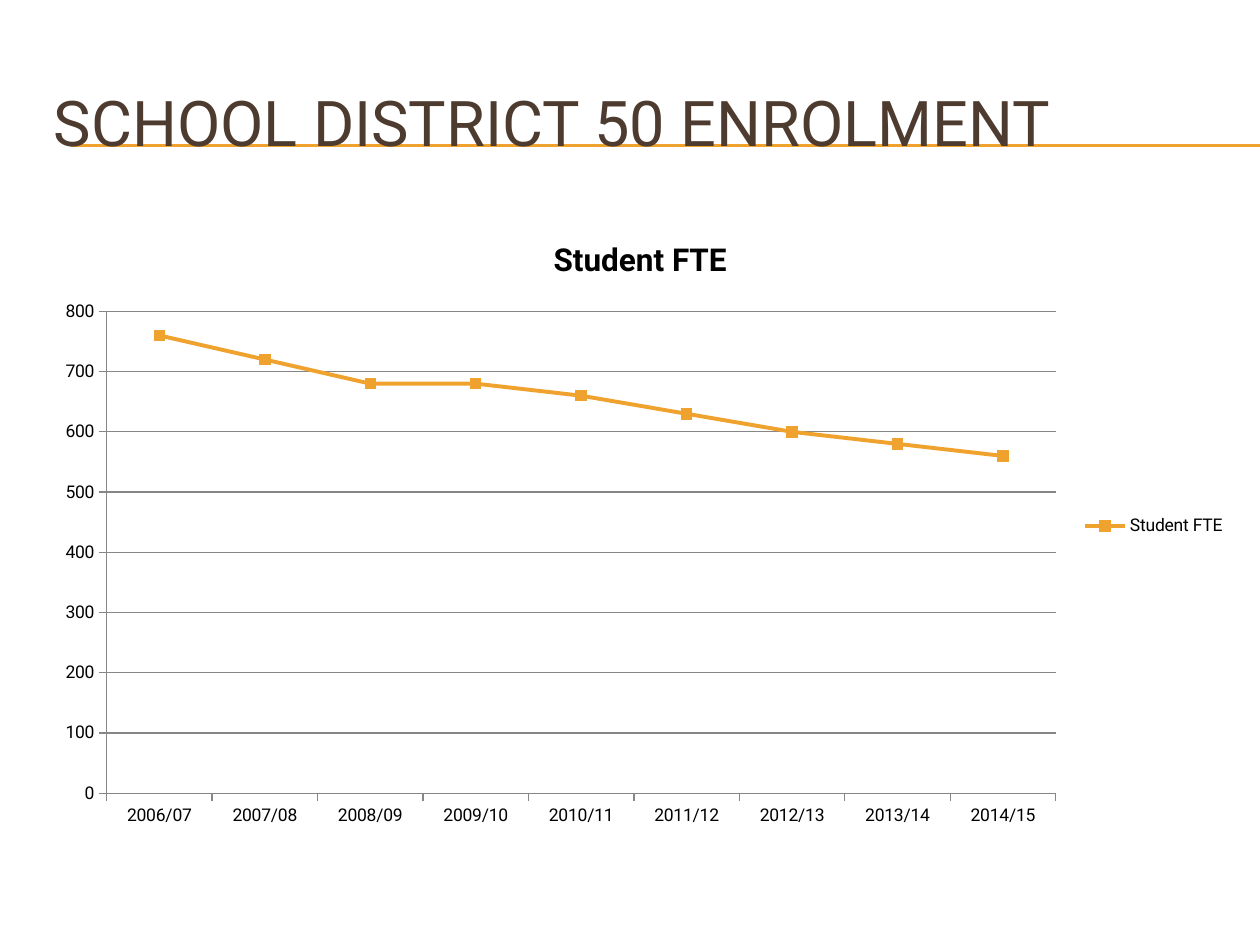
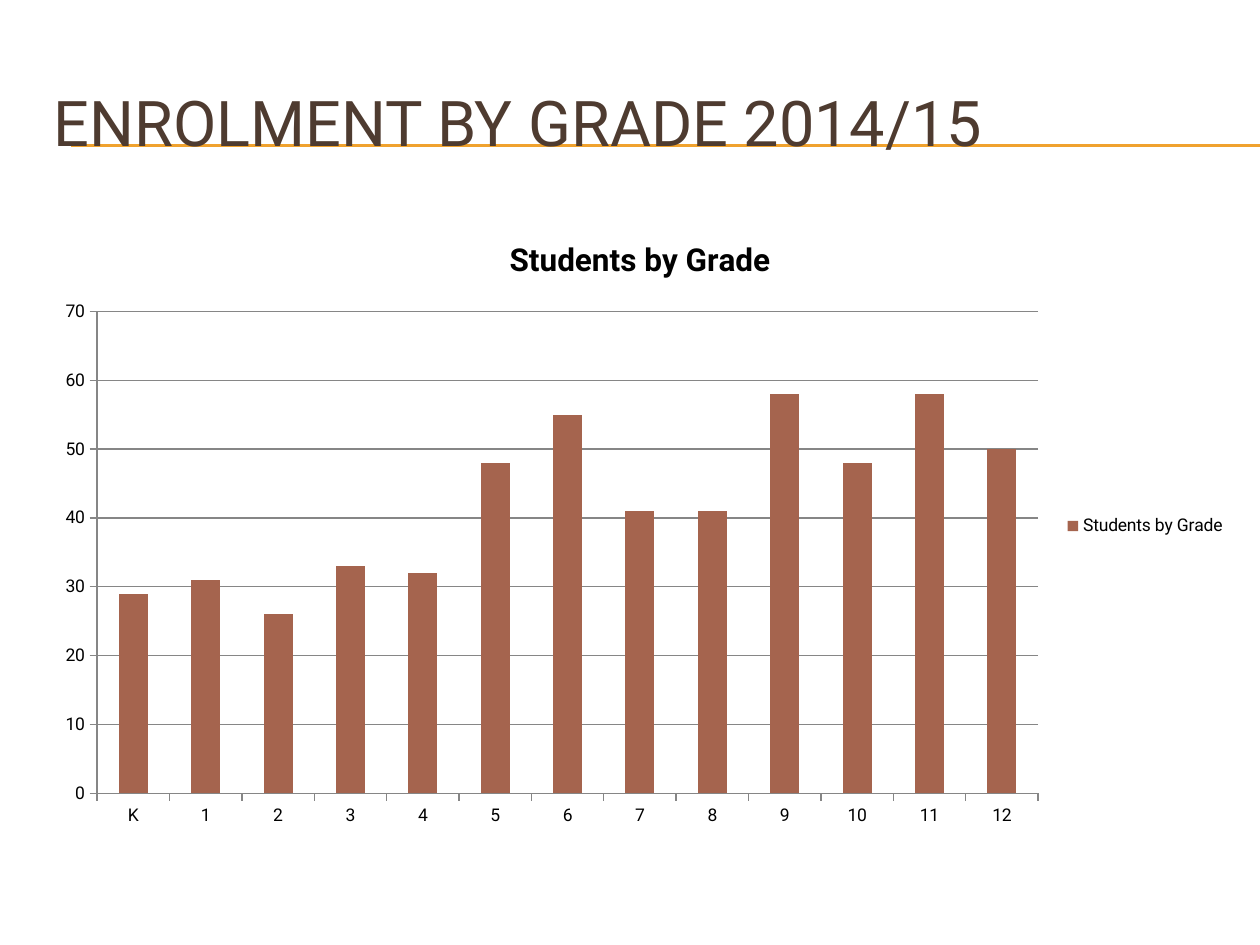
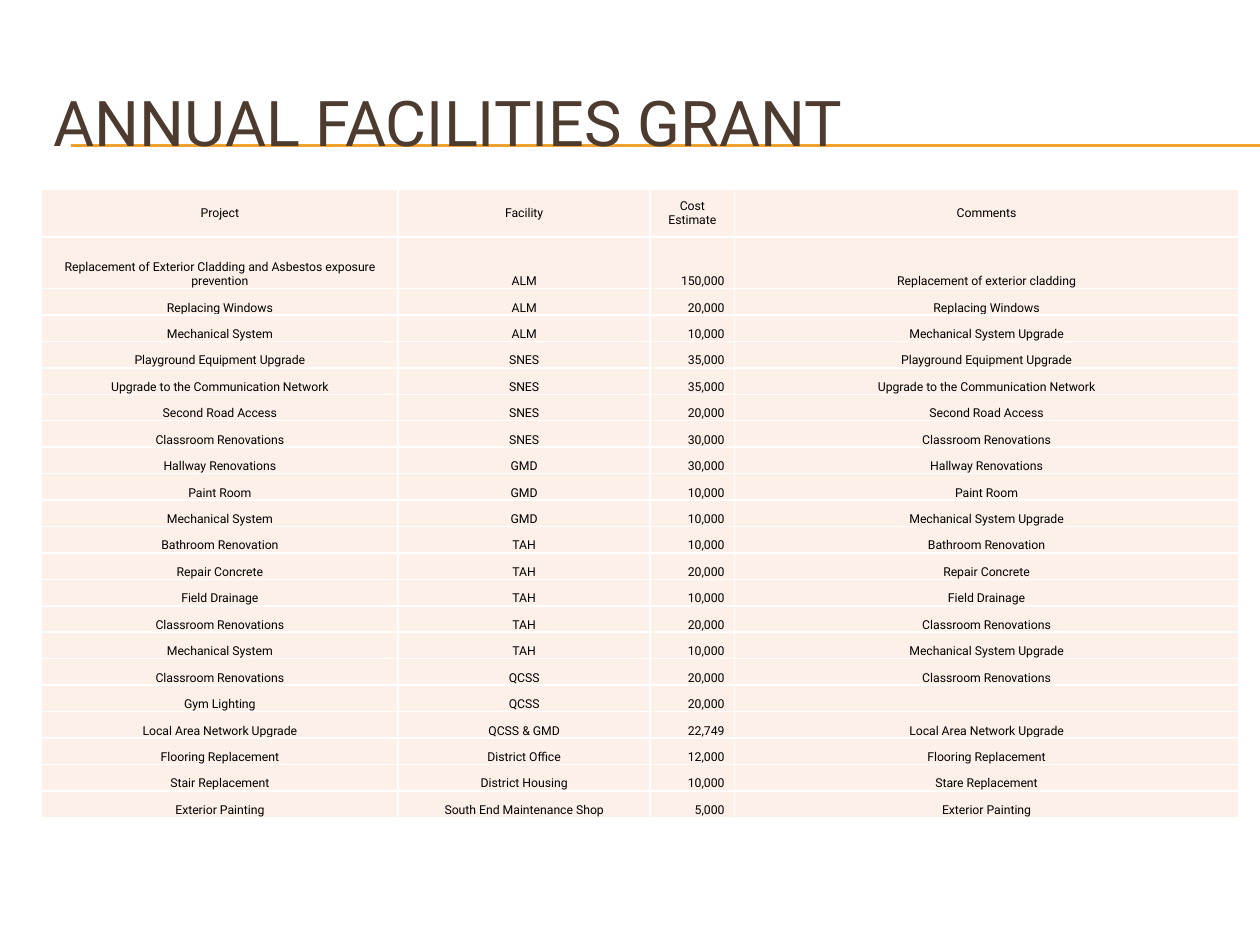
import dataclasses

import pptx
import pptx.chart.data
import pptx.dml.color
import pptx.enum.chart
import pptx.enum.shapes
import pptx.enum.text
import pptx.oxml
import pptx.oxml.ns
import pptx.util
from lxml import etree

Inches = pptx.util.Inches
Pt = pptx.util.Pt
ALIGN = pptx.enum.text.PP_ALIGN
ANCHOR = pptx.enum.text.MSO_ANCHOR
CHART = pptx.enum.chart.XL_CHART_TYPE


@dataclasses.dataclass(frozen=True)
class Theme:
    font: str = "Roboto"
    title: str = "4E3B30"
    accent: str = "F0A22E"
    brick: str = "A5644E"
    text: str = "000000"
    grid: str = "868686"
    cell: str = "FCF0E8"
    border: str = "FFFFFF"
    title_size: float = 36
    chart_title_size: float = 18
    chart_size: float = 10
    table_size: float = 7


T = Theme()

# Content
ENROLMENT = {
    "title": "SCHOOL DISTRICT 50 ENROLMENT",
    "series": "Student FTE",
    "kind": CHART.LINE_MARKERS,
    "categories": [f"{y}/{y % 100 + 1:02}" for y in range(2006, 2015)],
    "values": [760, 720, 680, 680, 660, 630, 600, 580, 560],
}
GRADES = {
    "title": "ENROLMENT BY GRADE 2014/15",
    "series": "Students by Grade",
    "kind": CHART.COLUMN_CLUSTERED,
    "categories": ["K"] + [str(grade) for grade in range(1, 13)],
    "values": [29, 31, 26, 33, 32, 48, 55, 41, 41, 58, 48, 58, 50],
}
GRANT_TITLE = "ANNUAL FACILITIES GRANT"
GRANT_HEADER = ("Project", "Facility", "Cost\vEstimate", "Comments")
GRANT_ROWS = [
    ("Replacement of Exterior Cladding and Asbestos exposure prevention", "ALM", 150000,
     "Replacement of exterior cladding"),
    ("Replacing Windows", "ALM", 20000, "Replacing Windows"),
    ("Mechanical System", "ALM", 10000, "Mechanical System Upgrade"),
    ("Playground Equipment Upgrade", "SNES", 35000, "Playground Equipment Upgrade"),
    ("Upgrade to the Communication Network", "SNES", 35000,
     "Upgrade to the Communication Network"),
    ("Second Road Access", "SNES", 20000, "Second Road Access"),
    ("Classroom Renovations", "SNES", 30000, "Classroom Renovations"),
    ("Hallway Renovations", "GMD", 30000, "Hallway Renovations"),
    ("Paint Room", "GMD", 10000, "Paint Room"),
    ("Mechanical System", "GMD", 10000, "Mechanical System Upgrade"),
    ("Bathroom Renovation", "TAH", 10000, "Bathroom Renovation"),
    ("Repair Concrete", "TAH", 20000, "Repair Concrete"),
    ("Field Drainage", "TAH", 10000, "Field Drainage"),
    ("Classroom Renovations", "TAH", 20000, "Classroom Renovations"),
    ("Mechanical System", "TAH", 10000, "Mechanical System Upgrade"),
    ("Classroom Renovations", "QCSS", 20000, "Classroom Renovations"),
    ("Gym Lighting", "QCSS", 20000, ""),
    ("Local Area Network Upgrade", "QCSS & GMD", 22749, "Local Area Network Upgrade"),
    ("Flooring Replacement", "District Office", 12000, "Flooring Replacement"),
    ("Stair Replacement", "District Housing", 10000, "Stare Replacement"),
    ("Exterior Painting", "South End Maintenance Shop", 5000, "Exterior Painting"),
]

# Layout, in inches
WIDTH, HEIGHT = 10, 7.5
LEFT, BODY_WIDTH = 0.33, 9.5
TITLE_TOP, TITLE_HEIGHT = 0.5, 0.92
RULE_LEFT, RULE_TOPS = 0.56, (1.15, 1.16)
CHART_TOP, CHART_HEIGHT = 1.7, 4.95
TABLE_TOP = 1.5
COLUMN_WIDTHS = (2.83, 2, 0.67, 4)
HEADER_HEIGHT, FIRST_HEIGHT, ROW_HEIGHT = 0.38, 0.41, 0.21
COST_COLUMN = 2


def rgb(color):
    return pptx.dml.color.RGBColor.from_string(color)


def style_font(font, size, color=T.text, bold=False):
    font.name, font.size, font.bold = T.font, Pt(size), bold
    font.color.rgb = rgb(color)


def style_line(line, color, width):
    line.color.rgb = rgb(color)
    line.width = Pt(width)


def add_titled_slide(prs, title):
    s = prs.slides.add_slide(prs.slide_layouts[6])
    # Double rule behind the title
    for y in RULE_TOPS:
        rule = s.shapes.add_connector(pptx.enum.shapes.MSO_CONNECTOR.STRAIGHT,
                                      Inches(RULE_LEFT), Inches(y), Inches(WIDTH), Inches(y))
        style_line(rule.line, T.accent, 0.75)
        etree.SubElement(rule._element.spPr, pptx.oxml.ns.qn("a:effectLst"))
    sp = s.shapes.add_textbox(Inches(LEFT), Inches(TITLE_TOP),
                              Inches(BODY_WIDTH), Inches(TITLE_HEIGHT))
    tf = sp.text_frame
    tf.word_wrap = True
    tf.vertical_anchor = ANCHOR.MIDDLE
    tf.text = title
    style_font(tf.paragraphs[0].runs[0].font, T.title_size, T.title)
    return s


def add_chart_slide(prs, content):
    s = add_titled_slide(prs, content["title"])
    data = pptx.chart.data.CategoryChartData()
    data.categories = content["categories"]
    data.add_series(content["series"], content["values"])
    chart = s.shapes.add_chart(content["kind"], Inches(LEFT), Inches(CHART_TOP),
                               Inches(BODY_WIDTH), Inches(CHART_HEIGHT), data).chart
    style_font(chart.font, T.chart_size)

    # Title and legend
    chart.has_title = True
    tf = chart.chart_title.text_frame
    tf.text = content["series"]
    style_font(tf.paragraphs[0].runs[0].font, T.chart_title_size, bold=True)
    chart.has_legend = True
    chart.legend.position = pptx.enum.chart.XL_LEGEND_POSITION.RIGHT
    chart.legend.include_in_layout = False

    # Axes
    for axis in (chart.category_axis, chart.value_axis):
        axis.major_tick_mark = pptx.enum.chart.XL_TICK_MARK.OUTSIDE
        style_line(axis.format.line, T.grid, 0.75)
    chart.value_axis.has_major_gridlines = True
    style_line(chart.value_axis.major_gridlines.format.line, T.grid, 0.75)

    # Series
    plot = chart.plots[0]
    plot.vary_by_categories = False
    series = plot.series[0]
    if content["kind"] == CHART.LINE_MARKERS:
        series.smooth = False
        style_line(series.format.line, T.accent, 2.25)
        series.marker.style = pptx.enum.chart.XL_MARKER_STYLE.SQUARE
        series.marker.size = 6
        series.marker.format.fill.solid()
        series.marker.format.fill.fore_color.rgb = rgb(T.accent)
        style_line(series.marker.format.line, T.accent, 0.75)
    else:
        plot.gap_width = 150
        series.format.fill.solid()
        series.format.fill.fore_color.rgb = rgb(T.brick)


def add_borders(cell):
    tc_pr = cell._tc.get_or_add_tcPr()
    for i, side in enumerate("LRTB"):
        tc_pr.insert(i, pptx.oxml.parse_xml(
            f'<a:ln{side} {pptx.oxml.ns.nsdecls("a")} w="{Pt(1)}"><a:solidFill>'
            f'<a:srgbClr val="{T.border}"/></a:solidFill></a:ln{side}>'))


def fill_cell(cell, text, anchor, is_cost):
    cell.fill.solid()
    cell.fill.fore_color.rgb = rgb(T.cell)
    add_borders(cell)
    cell.vertical_anchor = anchor
    cell.margin_left = cell.margin_top = Inches(0.01)
    cell.margin_right = Inches(0.08 if is_cost else 0.01)
    cell.margin_bottom = 0
    cell.text = text
    p = cell.text_frame.paragraphs[0]
    p.alignment = ALIGN.RIGHT if is_cost else ALIGN.CENTER
    for r in p.runs:
        style_font(r.font, T.table_size)
    if not text:
        # Keeps the empty cell from stretching its row
        end = etree.SubElement(p._p, pptx.oxml.ns.qn("a:endParaRPr"))
        end.set("sz", str(T.table_size * 100))


def add_grant_slide(prs):
    s = add_titled_slide(prs, GRANT_TITLE)
    rows = [GRANT_HEADER] + [(project, facility, f"{cost:,}", comment)
                             for project, facility, cost, comment in GRANT_ROWS]
    heights = [HEADER_HEIGHT, FIRST_HEIGHT] + [ROW_HEIGHT] * (len(rows) - 2)
    table = s.shapes.add_table(len(rows), len(COLUMN_WIDTHS), Inches(LEFT), Inches(TABLE_TOP),
                               Inches(BODY_WIDTH), Inches(sum(heights))).table
    table.first_row = table.horz_banding = False
    for column, width in zip(table.columns, COLUMN_WIDTHS):
        column.width = Inches(width)
    for i, (row, height) in enumerate(zip(rows, heights)):
        table.rows[i].height = Inches(height)
        for j, text in enumerate(row):
            fill_cell(table.cell(i, j), text, ANCHOR.BOTTOM if i else ANCHOR.MIDDLE,
                      is_cost=i > 0 and j == COST_COLUMN)


def main():
    prs = pptx.Presentation()
    prs.slide_width, prs.slide_height = Inches(WIDTH), Inches(HEIGHT)
    for content in (ENROLMENT, GRADES):
        add_chart_slide(prs, content)
    add_grant_slide(prs)
    prs.save("out.pptx")


if __name__ == "__main__":
    main()
